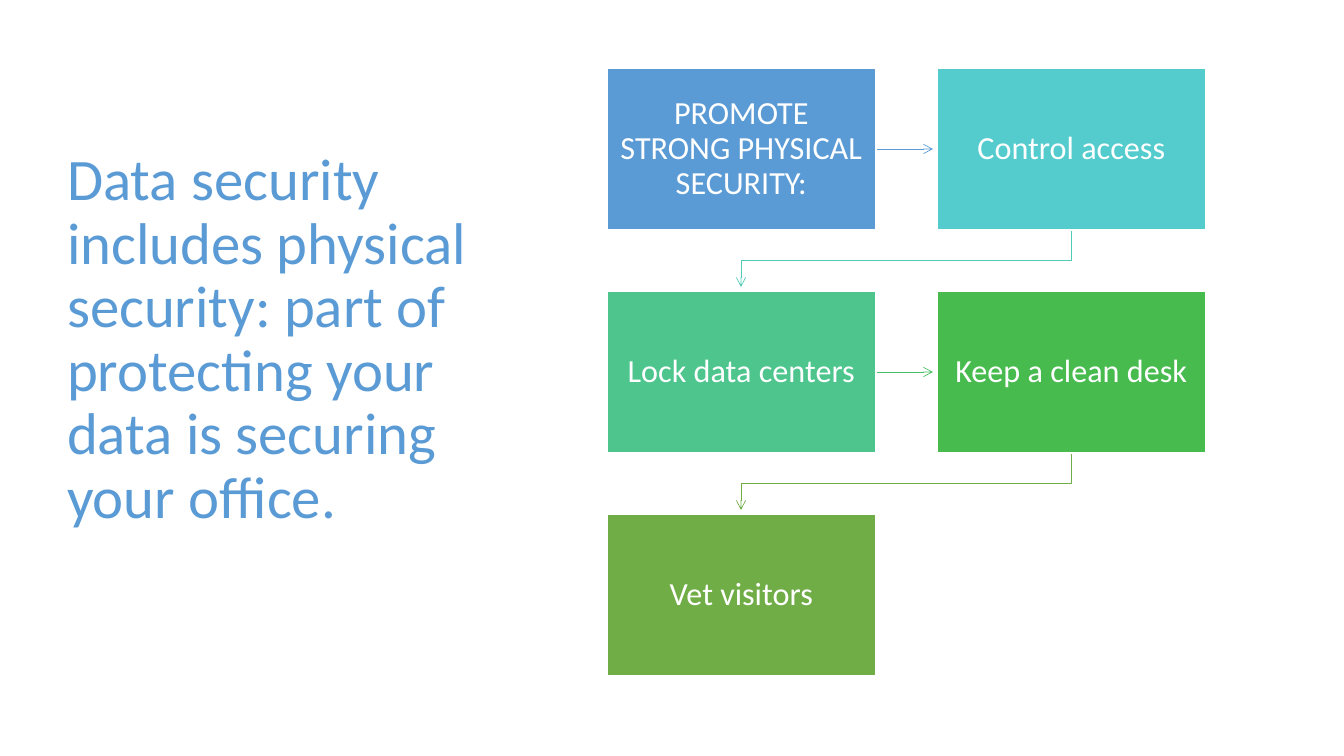
from pptx import Presentation
from pptx import util as u
from pptx.dml.color import RGBColor
from pptx.enum import shapes, text
from pptx.oxml.ns import qn
from lxml import etree

PX = 9071.43  # EMU per px, 100.8 px to the inch
FONT = "Calibri"
COLORS = {
    "blue": "5B9BD5", "cyan": "54CCCD", "mint": "4DC58D",
    "green": "48BB4F", "olive": "70AD47", "white": "FFFFFF",
    "teal arrow": "52CAB8", "green arrow": "49BF64",
}
LEFT, TOP, BOX_W, BOX_H = 607, 68, 269, 162
COLUMN_STEP, ROW_STEP, ARROW_GAP = 330, 223, 4
TITLE_LINE = 64
STEPS = [
    ("PROMOTE STRONG PHYSICAL SECURITY:", "blue", "blue"),
    ("Control access", "cyan", "teal arrow"),
    ("Lock data centers", "mint", "green arrow"),
    ("Keep a clean desk", "green", "olive"),
    ("Vet visitors", "olive", None),
]


def px(length):
    return u.Emu(round(length * PX))


def write(shape, words, size, color, insets):
    """Put one middle-anchored paragraph into a shape; insets are (side, end) in px."""
    frame = shape.text_frame
    frame.word_wrap = True
    frame.vertical_anchor = text.MSO_ANCHOR.MIDDLE
    frame.margin_left = frame.margin_right = px(insets[0])
    frame.margin_top = frame.margin_bottom = px(insets[1])
    para = frame.paragraphs[0]
    para.text = words
    para.line_spacing = 0.9
    para.font.name = FONT
    para.font.size = u.Pt(size)
    para.font.color.rgb = RGBColor.from_string(COLORS[color])
    return para


deck = Presentation()
deck.slide_width, deck.slide_height = px(1344), px(756)
page = deck.slides.add_slide(deck.slide_layouts[6])

title = page.shapes.add_textbox(px(58), px(69), px(420), px(607))
write(title, "Data security includes physical security: part of protecting your "
      "data is securing your office.", 42, "blue", (9, 5))
title.text_frame.margin_bottom = px(5 + TITLE_LINE)  # lifts the title half a line

for index, (words, fill, arrow_color) in enumerate(STEPS):
    row, column = divmod(index, 2)
    x = LEFT + column * COLUMN_STEP
    y = TOP + row * ROW_STEP

    # The arrow to the next step runs right, or bends down to the next row
    if arrow_color:
        if column == 0:
            middle = y + BOX_H // 2
            arrow = page.shapes.add_connector(
                shapes.MSO_CONNECTOR.STRAIGHT, px(x + BOX_W), px(middle),
                px(x + COLUMN_STEP - ARROW_GAP), px(middle))
            etree.SubElement(arrow._element.spPr, qn("a:effectLst"))
        else:
            start_x, start_y = x + BOX_W // 2, y + BOX_H
            end_x, end_y = LEFT + BOX_W // 2, y + ROW_STEP
            bend_y = (start_y + end_y) // 2
            path_builder = page.shapes.build_freeform(start_x, start_y, scale=PX)
            path_builder.add_line_segments(
                [(start_x, bend_y), (end_x, bend_y), (end_x, end_y - ARROW_GAP)],
                close=False)
            arrow = path_builder.convert_to_shape()
            arrow.fill.background()
            arrow.shadow.inherit = False
        arrow.line.color.rgb = RGBColor.from_string(COLORS[arrow_color])
        arrow.line.width = u.Pt(0.5)
        outline = arrow._element.spPr.find(qn("a:ln"))
        etree.SubElement(outline, qn("a:tailEnd"), type="arrow")

    box = page.shapes.add_shape(
        shapes.MSO_SHAPE.RECTANGLE, px(x), px(y), px(BOX_W), px(BOX_H))
    box.shadow.inherit = False
    box.fill.solid()
    box.fill.fore_color.rgb = RGBColor.from_string(COLORS[fill])
    box.line.color.rgb = RGBColor.from_string(COLORS["white"])
    box.line.width = u.Pt(1)
    para = write(box, words, 23, "white", (13, 14))
    para.alignment = text.PP_ALIGN.CENTER

deck.save("out.pptx")
